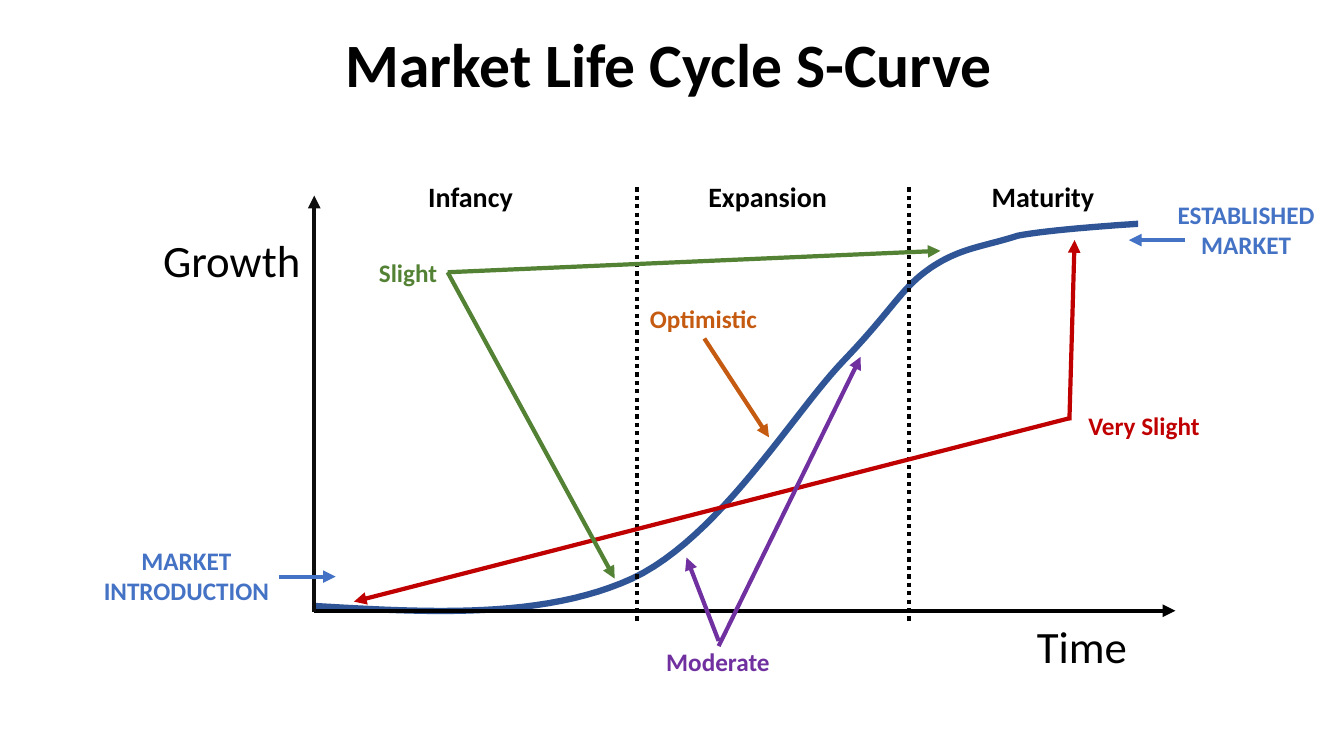
from lxml import etree
from pptx import Presentation
from pptx import util as u
from pptx.dml.color import RGBColor
from pptx.enum import dml, shapes, text
from pptx.oxml.ns import qn

HUES = {"black": "000000", "axis": "0D0D0D", "curve": "2F5597", "red": "C00000",
        "green": "548235", "purple": "7030A0", "orange": "C55A11", "blue": "4472C4"}


def write(shape, words, size, hue, bold, center, wrap):
    frame = shape.text_frame
    frame.word_wrap = wrap
    frame.vertical_anchor = text.MSO_ANCHOR.TOP
    para = frame.paragraphs[0]
    para.text = words
    para.alignment = text.PP_ALIGN.CENTER if center else text.PP_ALIGN.LEFT
    para.line_spacing = 1.0
    look = {"name": "Calibri", "size": u.Pt(size), "bold": bold}
    for run in para.runs:
        for key, val in look.items():
            setattr(run.font, key, val)
        run.font.color.rgb = RGBColor.from_string(HUES[hue])


def draw(start, end, hue, arrow=True):
    line = slide.shapes.add_connector(
        shapes.MSO_CONNECTOR.STRAIGHT, *[u.Cm(n) for n in start + end])
    line.line.color.rgb = RGBColor.from_string(HUES[hue])
    line.line.width = u.Pt(3)
    props = line._element.spPr
    if arrow:
        etree.SubElement(props.find(qn("a:ln")), qn("a:tailEnd"), type="triangle")
    else:
        line.line.dash_style = dml.MSO_LINE.ROUND_DOT
    etree.SubElement(props, qn("a:effectLst"))


deck = Presentation()
deck.slide_width, deck.slide_height = u.Cm(33.87), u.Cm(19.05)
slide = deck.slides.add_slide(deck.slide_layouts[5])

# Title
title = slide.shapes.title
place = {"left": 8.38, "top": 0.53, "width": 16.97, "height": 2.13}
for key, val in place.items():
    setattr(title, key, u.Cm(val))
write(title, "Market Life Cycle S-Curve", 44, "black", True, True, False)

# S-curve, sampled from joined Bezier arcs
knots = [(7.92, 15.27), (10.82, 15.44), (13.69, 15.6), (15.93, 14.58),
         (18.14, 13.54), (19.99, 10.41), (21.26, 9.09),
         (22.5, 7.8), (22.71, 7.26), (23.44, 6.76),
         (24.18, 6.25), (24.77, 6.22), (25.65, 5.94),
         (26.52, 5.77), (28.68, 5.64), (28.68, 5.64)]
steps = 24
dots = []
for i in range(0, len(knots) - 1, 3):
    for n in range(1, steps + 1):
        t = n / steps
        parts = ((1 - t) ** 3, 3 * t * (1 - t) ** 2, 3 * t * t * (1 - t), t ** 3)
        dots.append([u.Cm(sum(w * k[axis] for w, k in zip(parts, knots[i:i + 4])))
                     for axis in (0, 1)])
pen = slide.shapes.build_freeform(*[u.Cm(n) for n in knots[0]])
pen.add_line_segments(dots, close=False)
curve = pen.convert_to_shape()
curve.shadow.inherit = False
curve.fill.background()
curve.line.color.rgb = RGBColor.from_string(HUES["curve"])
curve.line.width = u.Pt(4.5)

# Axes and phase borders
draw((7.92, 15.39), (29.62, 15.39), "black")
draw((7.92, 15.42), (7.92, 4.93), "axis")
for x in (16.05, 22.91):
    draw((x, 4.72), (x, 15.7), "black", arrow=False)

# Arrows to the curve
arrows = [
    ((26.95, 10.54), (8.92, 15.16), "red"),
    ((26.95, 10.59), (27.08, 6.05), "red"),
    ((11.28, 6.86), (23.7, 6.32), "green"),
    ((11.28, 6.86), (15.49, 14.58), "green"),
    ((18.11, 16.15), (17.3, 14.05), "purple"),
    ((18.11, 16.28), (21.69, 8.99), "purple"),
    ((17.75, 8.53), (19.38, 11.02), "orange"),
    ((7.04, 14.53), (8.46, 14.53), "blue"),
    ((29.87, 6.05), (28.45, 6.05), "blue"),
]
for start, end, hue in arrows:
    draw(start, end, hue)

# Labels: words, left, top, width, height, size, colour
labels = [
    ("Time", 25.88, 15.47, 2.82, 1.63, 32, "black"),
    ("Growth", 3.86, 5.74, 4.01, 1.63, 32, "black"),
    ("Infancy", 10.54, 4.39, 2.67, 1.12, 20, "black"),
    ("Expansion", 17.6, 4.39, 3.58, 1.12, 20, "black"),
    ("Maturity", 24.74, 4.39, 3.1, 1.12, 20, "black"),
    ("Very Slight", 27.18, 10.21, 3.33, 1.02, 18, "red"),
    ("Slight", 9.3, 6.35, 1.98, 1.02, 18, "green"),
    ("Moderate", 16.54, 16.15, 3.15, 1.02, 18, "purple"),
    ("Optimistic", 16.13, 7.52, 3.23, 1.02, 18, "orange"),
    ("MARKET\nINTRODUCTION", 2.34, 13.61, 4.72, 1.8, 18, "blue"),
    ("ESTABLISHED\nMARKET", 29.41, 4.9, 3.99, 1.8, 18, "blue"),
]
for words, *area, size, hue in labels:
    box = slide.shapes.add_textbox(*[u.Cm(n) for n in area])
    write(box, words, size, hue, size < 32, hue == "blue", hue == "black")

deck.save("out.pptx")
